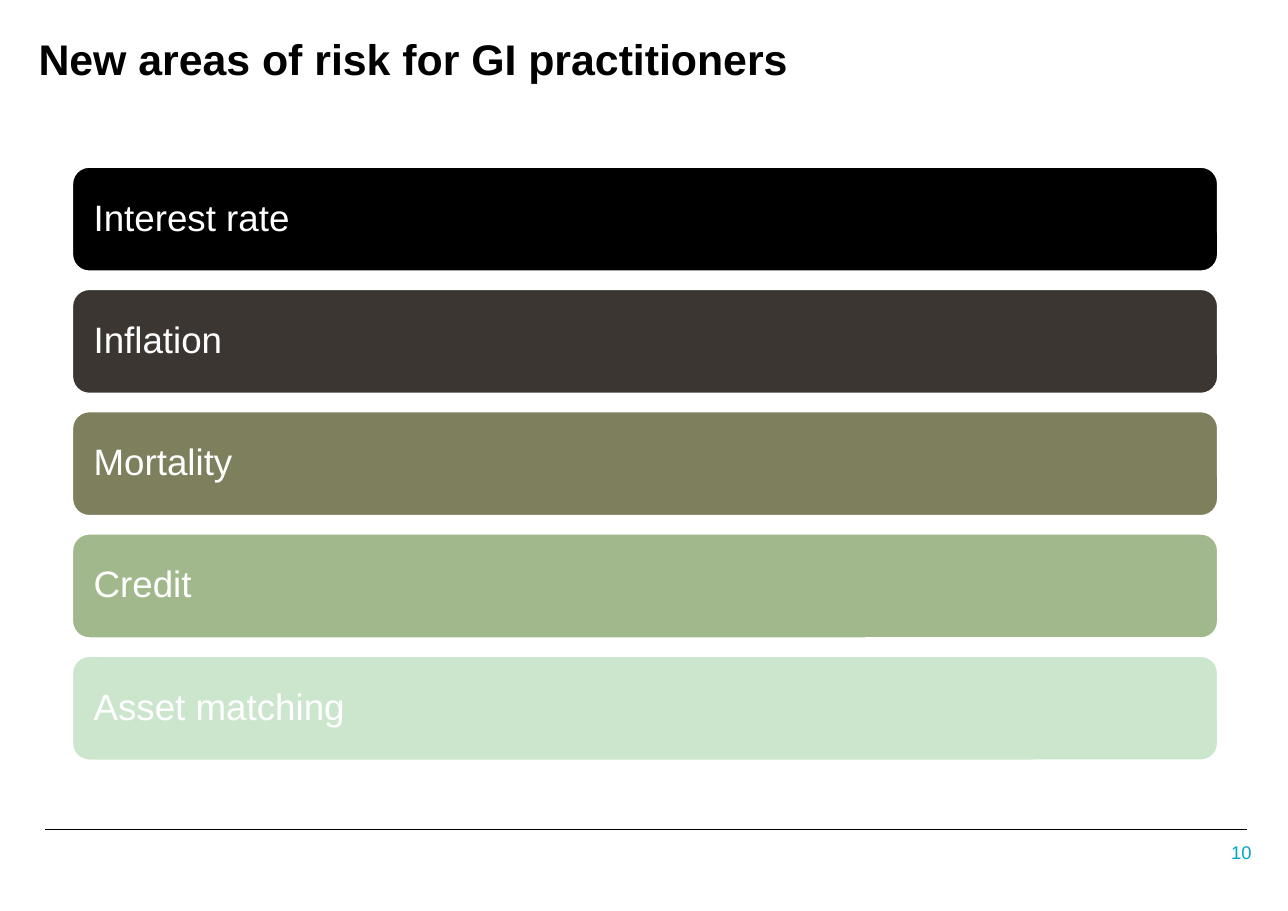
from pptx import Presentation
from pptx.dml.color import RGBColor
from pptx.enum.shapes import MSO_CONNECTOR, MSO_SHAPE
from pptx.enum.text import MSO_ANCHOR, PP_ALIGN
from pptx.util import Pt
from lxml.etree import SubElement
from pptx.oxml.ns import qn

WIDTH, HEIGHT = 841.68, 595.44
COLORS = {
    "black": "000000",
    "white": "FFFFFF",
    "page": "00A3C7",
    "Interest rate": "000000",
    "Inflation": "3C3632",
    "Mortality": "7D7F5D",
    "Credit": "A1B88D",
    "Asset matching": "CCE6CE",
}
RISKS = ["Interest rate", "Inflation", "Mortality", "Credit", "Asset matching"]


def color(name):
    return RGBColor.from_string(COLORS[name])


def write(shape, text, size, ink, pads, anchor=MSO_ANCHOR.MIDDLE,
          align=PP_ALIGN.LEFT, bold=False):
    frame = shape.text_frame
    frame.text = text
    frame.word_wrap = True
    frame.vertical_anchor = anchor
    side, edge = pads
    frame.margin_left = frame.margin_right = Pt(side)
    frame.margin_top = frame.margin_bottom = Pt(edge)
    para = frame.paragraphs[0]
    para.alignment = align
    font = para.runs[0].font
    font.name, font.size, font.bold = "Arial", Pt(size), bold
    font.color.rgb = color(ink)
    return para


def title(slide, left, top, width, height):
    box = slide.shapes.add_textbox(Pt(left), Pt(top), Pt(width), Pt(height))
    write(box, "New areas of risk for GI practitioners", 28, "black",
          (7.9, 4.3), MSO_ANCHOR.TOP, bold=True)


def risks(slide, left, top, width, height, gap=10.8):
    tall = (height - gap * (len(RISKS) - 1)) / len(RISKS)
    for row, risk in enumerate(RISKS):
        y = top + row * (tall + gap)
        bar = slide.shapes.add_shape(MSO_SHAPE.ROUNDED_RECTANGLE, Pt(left),
                                     Pt(y), Pt(width), Pt(tall))
        bar.shadow.inherit = False
        bar.fill.solid()
        bar.fill.fore_color.rgb = color(risk)
        bar.line.color.rgb = color("white")
        bar.line.width = Pt(2)
        # The rounded corners add to the side padding
        write(bar, risk, 24, "white", (11, 3.6)).line_spacing = 0.9


def footer(slide, left, top, width, height):
    # Rule
    rule = slide.shapes.add_connector(MSO_CONNECTOR.STRAIGHT, Pt(left),
                                      Pt(top), Pt(left + width), Pt(top))
    rule.line.color.rgb = color("black")
    rule.line.width = Pt(0.75)
    SubElement(rule._element.spPr, qn("a:effectLst"))

    # Page number
    wide, tall = 58.3, 17.3
    box = slide.shapes.add_textbox(Pt(left + width + 12.3 - wide),
                                   Pt(top + height - tall), Pt(wide), Pt(tall))
    write(box, "10", 12, "page", (9.4, 4.3), align=PP_ALIGN.RIGHT)


def main():
    deck = Presentation()
    deck.slide_width, deck.slide_height = Pt(WIDTH), Pt(HEIGHT)
    slide = deck.slides.add_slide(deck.slide_layouts[6])
    title(slide, 17.3, 17.3, 664.6, 99.4)
    risks(slide, 46.8, 108.7, 749.5, 388.8)
    footer(slide, 29.5, 542.2, 785.5, 23.8)
    deck.save("out.pptx")


if __name__ == "__main__":
    main()
